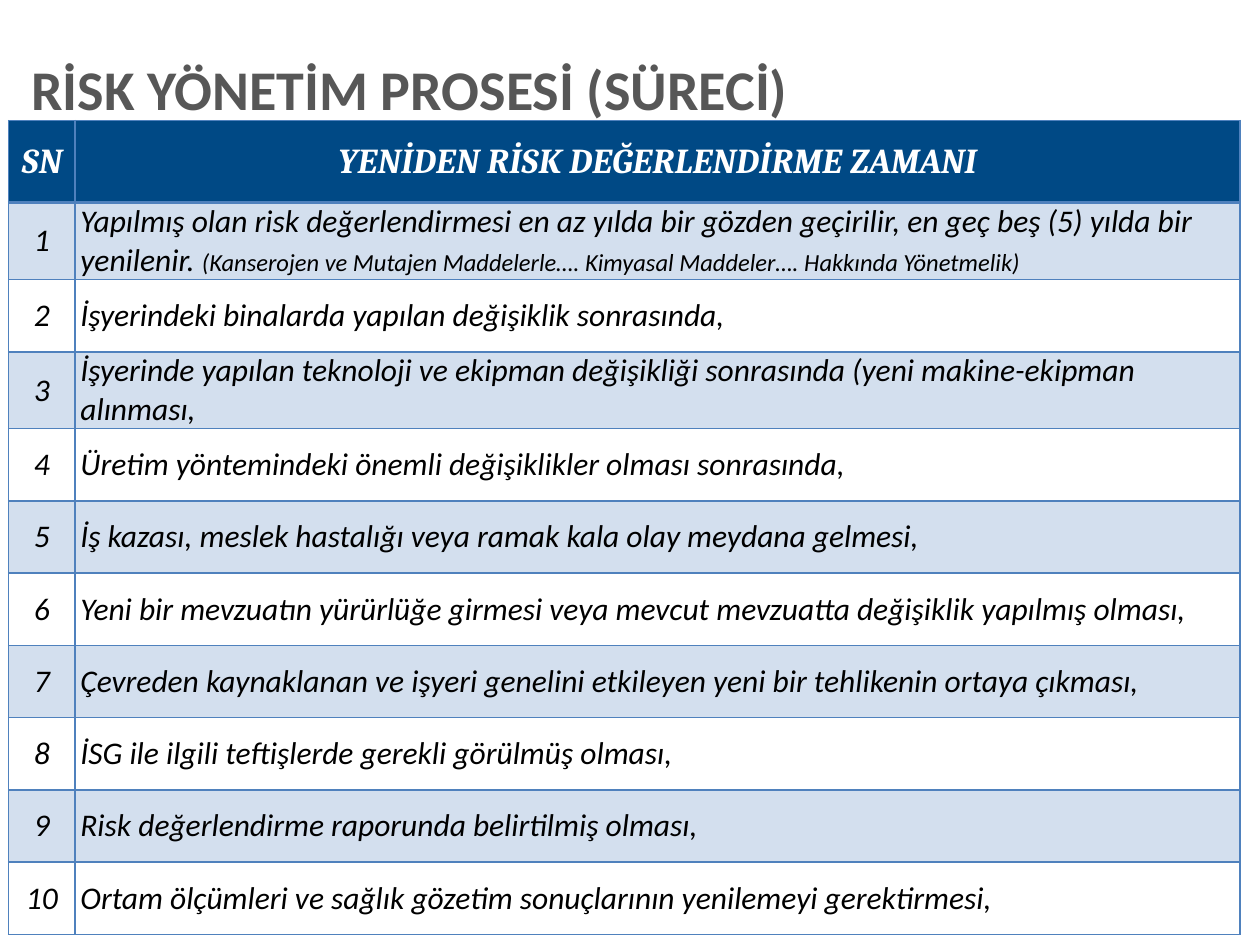
from dataclasses import dataclass

from lxml.etree import SubElement
from pptx import Presentation
from pptx.dml.color import RGBColor
from pptx.enum.text import MSO_ANCHOR as Anchor, MSO_AUTO_SIZE as AutoSize, PP_ALIGN as Align
from pptx.oxml.ns import qn
from pptx.util import Pt


@dataclass(frozen=True)
class Theme:
    title_color: str = "575757"
    header_fill: str = "004985"
    header_text: str = "FFFFFF"
    band_fill: str = "D3DFEE"
    body_text: str = "000000"
    border: str = "4F81BD"
    body_font: str = "Calibri"
    header_font: str = "Cambria"
    title_size: int = 32
    header_size: int = 20
    body_size: int = 18
    note_size: int = 14
    thin_line: float = 1
    thick_line: float = 2.25


HEADER = ("SN", "YENİDEN RİSK DEĞERLENDİRME ZAMANI")
REVIEW_TIMES = [
    "Yapılmış olan risk değerlendirmesi en az yılda bir gözden geçirilir, "
    "en geç beş (5) yılda bir yenilenir. ",
    "İşyerindeki binalarda yapılan değişiklik sonrasında,",
    "İşyerinde yapılan teknoloji ve ekipman değişikliği sonrasında "
    "(yeni makine-ekipman alınması,",
    "Üretim yöntemindeki önemli değişiklikler olması sonrasında,",
    "İş kazası, meslek hastalığı veya ramak kala olay meydana gelmesi,",
    "Yeni bir mevzuatın yürürlüğe girmesi veya mevcut mevzuatta değişiklik yapılmış olması,",
    "Çevreden kaynaklanan ve işyeri genelini etkileyen yeni bir tehlikenin ortaya çıkması,",
    "İSG ile ilgili teftişlerde gerekli görülmüş olması,",
    "Risk değerlendirme raporunda belirtilmiş olması,",
    "Ortam ölçümleri ve sağlık gözetim sonuçlarının yenilemeyi gerektirmesi,",
]
REGULATION_NOTE = "(Kanserojen ve Mutajen Maddelerle…. Kimyasal Maddeler…. Hakkında Yönetmelik)"


def add_text(paragraph, text, *, font, size, color, bold=False, italic=False, align=Align.LEFT):
    paragraph.alignment = align
    run = paragraph.add_run()
    run.text = text
    run.font.name = font
    run.font.size = Pt(size)
    run.font.bold = bold
    run.font.italic = italic
    run.font.color.rgb = RGBColor.from_string(color)


class SlideBuilder:
    def __init__(self, slide, theme):
        self.slide = slide
        self.theme = theme

    def title(self, text, left, top, width, height):
        shape = self.slide.shapes.title
        shape.left, shape.top, shape.width, shape.height = map(Pt, (left, top, width, height))
        frame = shape.text_frame
        frame.auto_size = AutoSize.NONE
        frame.word_wrap = True
        frame.vertical_anchor = Anchor.MIDDLE
        frame.margin_left = frame.margin_right = 0
        paragraph = frame.paragraphs[0]
        paragraph.line_spacing = 0.9
        add_text(paragraph, text, font=self.theme.body_font, size=self.theme.title_size,
                 color=self.theme.title_color, bold=True)

    def table(self, left, top, column_widths, row_heights):
        frame = self.slide.shapes.add_table(
            len(row_heights), len(column_widths), Pt(left), Pt(top),
            Pt(sum(column_widths)), Pt(sum(row_heights)))
        table = frame.table
        for column, width in zip(table.columns, column_widths):
            column.width = Pt(width)
        for row, height in zip(table.rows, row_heights):
            row.height = Pt(height)
        return table

    def borders(self, cell, **widths):
        properties = cell._tc.get_or_add_tcPr()
        for side in ("L", "R", "T", "B"):
            width = widths.get(side, self.theme.thin_line)
            line = SubElement(properties, qn(f"a:ln{side}"), w=str(Pt(width)))
            fill = SubElement(line, qn("a:solidFill"))
            SubElement(fill, qn("a:srgbClr"), val=self.theme.border)

    def cell(self, table, row, column, text):
        theme = self.theme
        cell = table.cell(row, column)
        cell.vertical_anchor = Anchor.MIDDLE
        cell.margin_left = cell.margin_right = Pt(3 if column else 5)
        cell.margin_top = cell.margin_bottom = 0

        # The rule under the header is heavier than the grid
        heavy_side = {0: "B", 1: "T"}.get(row)
        self.borders(cell, **({heavy_side: theme.thick_line} if heavy_side else {}))

        # Header, then alternating bands
        if row % 2 or row == 0:
            cell.fill.solid()
            cell.fill.fore_color.rgb = RGBColor.from_string(
                theme.band_fill if row else theme.header_fill)
        else:
            cell.fill.background()

        paragraph = cell.text_frame.paragraphs[0]
        if row == 0:
            add_text(paragraph, text, font=theme.header_font, size=theme.header_size,
                     color=theme.header_text, bold=True, italic=True, align=Align.CENTER)
        else:
            add_text(paragraph, text, font=theme.body_font, size=theme.body_size,
                     color=theme.body_text, italic=True,
                     align=Align.LEFT if column else Align.CENTER)
        return cell


def main():
    presentation = Presentation()
    presentation.slide_width, presentation.slide_height = Pt(720), Pt(540)
    theme = Theme()
    builder = SlideBuilder(presentation.slides.add_slide(presentation.slide_layouts[5]), theme)

    # Title
    builder.title("RİSK YÖNETİM PROSESİ (SÜRECİ)", 18, 27.4, 694, 51)

    # Numbered table of review times
    rows = [HEADER] + [(str(number), text) for number, text in enumerate(REVIEW_TIMES, 1)]
    table = builder.table(5, 69, (38, 665.5), [46.8] + [41.3] * len(REVIEW_TIMES))
    for row, texts in enumerate(rows):
        for column, text in enumerate(texts):
            builder.cell(table, row, column, text)

    # Smaller note after the first review time
    add_text(table.cell(1, 1).text_frame.paragraphs[0], REGULATION_NOTE, font=theme.body_font,
             size=theme.note_size, color=theme.body_text, italic=True)

    presentation.save("out.pptx")


if __name__ == "__main__":
    main()
